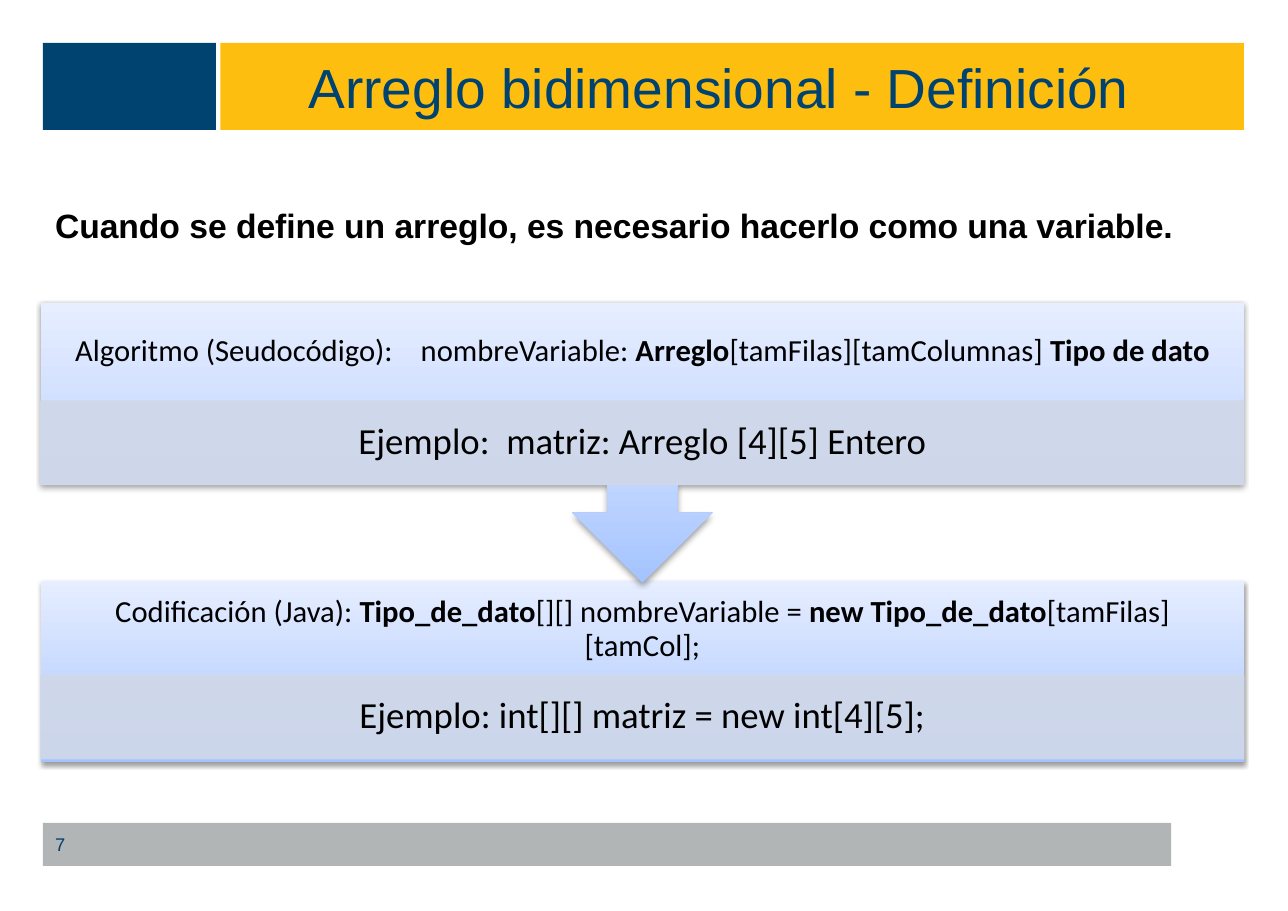
from lxml.etree import SubElement
from pptx import Presentation
from pptx.dml.color import RGBColor
from pptx.enum.shapes import MSO_SHAPE
from pptx.enum.text import MSO_ANCHOR, PP_ALIGN
from pptx.oxml.ns import qn
from pptx.util import Inches, Pt

NAVY, GOLD, GREY, BAND = "004270", "FEBE10", "B2B5B6", "D0D8E8"
GRADIENT = [(0, "A4C4FF"), (35, "BFD4FF"), (100, "E6EEFF")]
LEFT, WIDTH = 0.37, 10.92
HEADER_H, BAND_H = 0.89, 0.76


def rgb(value):
    return RGBColor.from_string(value)


class SlideBuilder:
    def __init__(self, prs):
        self.slide = prs.slides.add_slide(prs.slide_layouts[6])

    def shape(self, kind, x, y, w, h):
        sp = self.slide.shapes.add_shape(kind, Inches(x), Inches(y), Inches(w), Inches(h))
        sp.shadow.inherit = False
        sp.line.fill.background()
        return sp

    def rect(self, x, y, w, h, color):
        sp = self.shape(MSO_SHAPE.RECTANGLE, x, y, w, h)
        sp.fill.solid()
        sp.fill.fore_color.rgb = rgb(color)
        return sp

    def band(self, y):
        sp = self.rect(LEFT, y, WIDTH, BAND_H, BAND)
        sp.line.color.rgb = rgb(BAND)
        sp.line.width = Pt(0.75)
        for clr in sp._element.spPr.iter(qn("a:srgbClr")):
            SubElement(clr, qn("a:alpha"), val="90000")
        return sp

    def panel(self, kind, y, h):
        sp = self.shape(kind, LEFT, y, WIDTH, h)
        sp.fill.gradient()
        sp.fill.gradient_angle = 90
        spPr = sp._element.spPr
        stops = spPr.find(qn("a:gradFill")).find(qn("a:gsLst"))
        for gs in list(stops):
            stops.remove(gs)
        for pos, color in GRADIENT:
            gs = SubElement(stops, qn("a:gs"), pos=str(pos * 1000))
            SubElement(gs, qn("a:srgbClr"), val=color)
        shadow = SubElement(spPr.find(qn("a:effectLst")), qn("a:outerShdw"),
                            blurRad=str(Pt(3.1)), dist=str(Pt(1.6)),
                            dir="5400000", rotWithShape="0")
        clr = SubElement(shadow, qn("a:srgbClr"), val="000000")
        SubElement(clr, qn("a:alpha"), val="38000")
        return sp

    def textbox(self, x, y, w, h):
        return self.slide.shapes.add_textbox(Inches(x), Inches(y), Inches(w), Inches(h))

    def label(self, sp, runs, size, color="000000", font="Arial",
              align=PP_ALIGN.LEFT, spacing=1.0, left=0.11, side=0.11, edge=0.05):
        tf = sp.text_frame
        tf.word_wrap = True
        tf.vertical_anchor = MSO_ANCHOR.MIDDLE
        tf.margin_left, tf.margin_right = Inches(left), Inches(side)
        tf.margin_top = tf.margin_bottom = Inches(edge)
        p = tf.paragraphs[0]
        p.alignment = align
        p.line_spacing = spacing
        for text, bold, gap in runs:
            r = p.add_run()
            r.text = text
            r.font.name = font
            r.font.size = Pt(size)
            r.font.bold = bold
            r.font.color.rgb = rgb(color)
            if gap:
                r._r.get_or_add_rPr().set("spc", str(gap))

    def block(self, kind, y, h, band_y, header, example):
        self.panel(kind, y, h)
        style = dict(font="Calibri", align=PP_ALIGN.CENTER, spacing=0.9)
        self.label(self.textbox(LEFT, y, WIDTH, HEADER_H), header, 20,
                   left=0.16, side=0.16, edge=0.16, **style)
        self.label(self.band(band_y), example, 24,
                   left=0.19, side=0.19, edge=0.03, **style)


def main():
    prs = Presentation()
    prs.slide_width, prs.slide_height = Inches(11.69), Inches(8.27)
    s = SlideBuilder(prs)

    footer = s.rect(0.39, 7.47, 10.24, 0.39, GREY)
    s.label(footer, [("7", False, 0)], 12, NAVY)
    s.rect(0.39, 0.39, 1.57, 0.79, NAVY)
    title = s.rect(2, 0.39, 9.29, 0.79, GOLD)
    s.label(title, [("Arreglo bidimensional - Definición", False, 0)], 36, NAVY, left=0.8)

    intro = s.textbox(0.39, 1.82, 10.9, 0.45)
    s.label(intro, [("Cuando se define un arreglo, es necesario hacerlo como una variable.",
                     True, 0)], 22)

    s.block(MSO_SHAPE.RECTANGLE, 5.27, 1.65, 6.13,
            [("Codificación (Java): ", False, 0), ("Tipo_de_dato", True, 0),
             ("[][] nombreVariable = ", False, 0), ("new Tipo_de_dato", True, 0),
             ("[tamFilas][tamCol];", False, 0)],
            [("Ejemplo: int[][] matriz = new int[4][5];", False, 0)])
    s.block(MSO_SHAPE.DOWN_ARROW_CALLOUT, 2.75, 2.54, 3.64,
            [("Algoritmo (Seudocódigo):", False, 0), (" ", False, 1360),
             ("nombreVariable: ", False, 0), ("Arreglo", True, 0),
             ("[tamFilas][tamColumnas] ", False, 0), ("Tipo de dato", True, 0)],
            [("Ejemplo:", False, 0), (" ", False, 540),
             ("matriz: Arreglo [4][5] Entero", False, 0)])

    prs.save("out.pptx")


if __name__ == "__main__":
    main()
